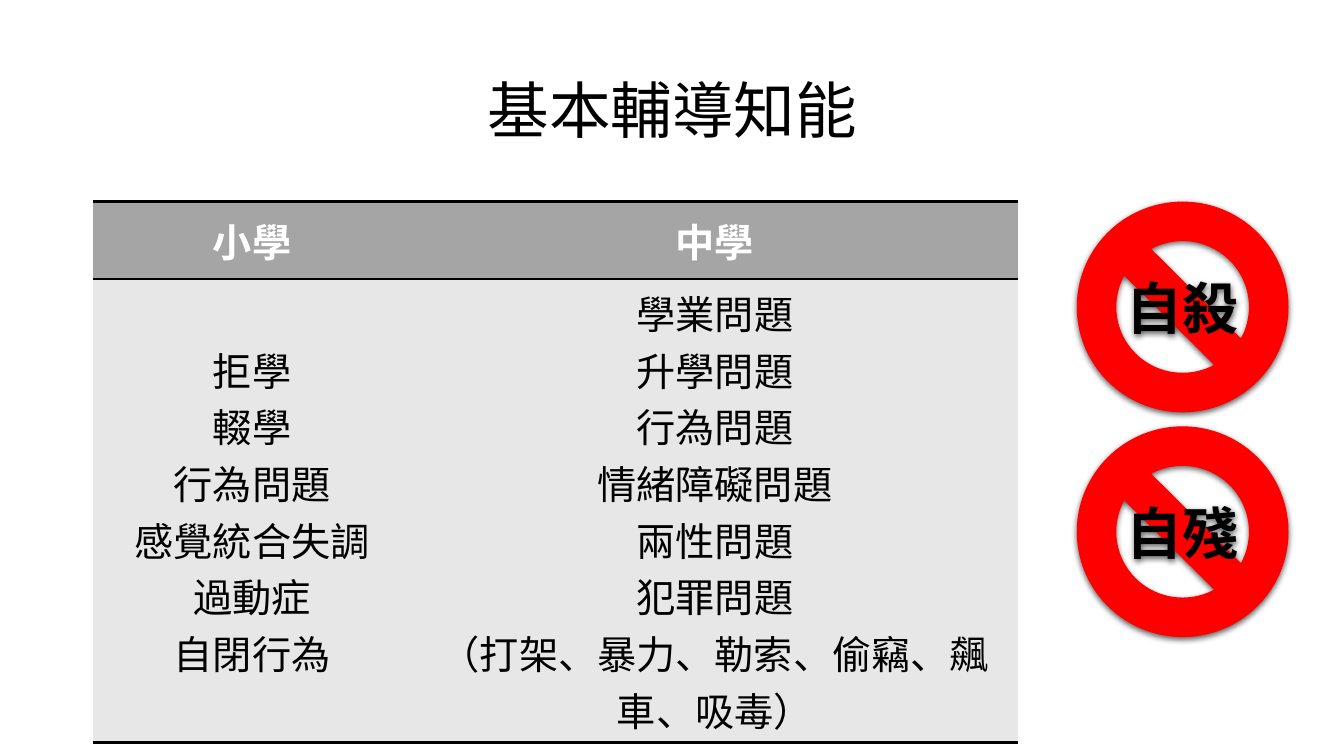
from dataclasses import dataclass

from lxml.etree import SubElement
from pptx import Presentation
from pptx.dml.color import RGBColor
from pptx.enum.shapes import MSO_SHAPE
from pptx.enum.text import MSO_ANCHOR, PP_ALIGN
from pptx.oxml.ns import qn
from pptx.slide import Slide
from pptx.table import _Cell
from pptx.text.text import TextFrame
from pptx.util import Inches, Pt


@dataclass(frozen=True)
class Theme:
    """Colours, fonts and type sizes."""
    black: str = "000000"
    white: str = "FFFFFF"
    red: str = "FF0000"
    header: str = "A5A5A5"
    body: str = "E7E7E7"
    cjk: str = "Noto Sans CJK SC"
    latin: str = "Calibri"
    title_size: int = 44
    sign_size: int = 40
    table_size: int = 28


@dataclass(frozen=True)
class Column:
    """A school level and its counselling issues."""
    level: str
    width: float
    issues: tuple[str, ...]


@dataclass(frozen=True)
class Sign:
    """A prohibition sign and its top edge."""
    label: str
    top: float


T = Theme()
ROW_HEIGHTS = (0.77, 4.18)
COLUMNS = (
    Column("小學", 3.16, ("拒學", "輟學", "行為問題", "感覺統合失調", "過動症", "自閉行為")),
    Column("中學", 6.02, ("學業問題", "升學問題", "行為問題", "情緒障礙問題", "兩性問題",
                        "犯罪問題", "（打架、暴力、勒索、偷竊、飆車、吸毒）")),
)
SIGNS = (Sign("自殺", 2), Sign("自殘", 4.23))


def write(tf: TextFrame, *lines: str, size: int, font: str = T.cjk, color: str = T.black,
          bold: bool = False, spacing: float = 1.0) -> None:
    """Fill a text frame with centred paragraphs."""
    tf.word_wrap = True
    for i, line in enumerate(lines):
        p = tf.add_paragraph() if i else tf.paragraphs[0]
        p.alignment = PP_ALIGN.CENTER
        p.line_spacing = spacing
        r = p.add_run()
        r.text = line
        r.font.size, r.font.bold, r.font.name = Pt(size), bold, font
        r.font.color.rgb = RGBColor.from_string(color)
        if font == T.cjk:
            SubElement(r.font._element, qn("a:ea"), typeface=font)


def add_title(s: Slide, text: str) -> None:
    """Add the slide title."""
    tf = s.shapes.add_textbox(Inches(0.92), Inches(0.4), Inches(11.5), Inches(1.45)).text_frame
    tf.vertical_anchor = MSO_ANCHOR.MIDDLE
    write(tf, text, size=T.title_size, spacing=0.9)


def set_borders(cell: _Cell, ruled: tuple[str, ...]) -> None:
    """Rule the named cell sides and clear the others."""
    tcPr = cell._tc.get_or_add_tcPr()
    for side in ("lnL", "lnR", "lnT", "lnB"):
        ln = SubElement(tcPr, qn(f"a:{side}"), w=str(Pt(2)))
        if side in ruled:
            SubElement(SubElement(ln, qn("a:solidFill")), qn("a:srgbClr"), val=T.black)
        else:
            SubElement(ln, qn("a:noFill"))


def fill_cell(cell: _Cell, *lines: str, fill: str, color: str, bold: bool,
              ruled: tuple[str, ...]) -> None:
    """Write, rule and colour one table cell."""
    write(cell.text_frame, *lines, size=T.table_size, font=T.latin, color=color, bold=bold)
    cell.vertical_anchor = MSO_ANCHOR.MIDDLE
    set_borders(cell, ruled)
    cell.fill.solid()
    cell.fill.fore_color.rgb = RGBColor.from_string(fill)


def add_issue_table(s: Slide) -> None:
    """Add the table of issues by school level."""
    width = sum(c.width for c in COLUMNS)
    table = s.shapes.add_table(len(ROW_HEIGHTS), len(COLUMNS), Inches(0.92), Inches(2),
                               Inches(width), Inches(sum(ROW_HEIGHTS))).table
    for row, height in zip(table.rows, ROW_HEIGHTS):
        row.height = Inches(height)
    for i, column in enumerate(COLUMNS):
        table.columns[i].width = Inches(column.width)
        fill_cell(table.cell(0, i), column.level, fill=T.header, color=T.white, bold=True,
                  ruled=("lnT", "lnB"))
        fill_cell(table.cell(1, i), *column.issues, fill=T.body, color=T.black, bold=False,
                  ruled=("lnT", "lnB"))


def add_sign(s: Slide, sign: Sign) -> None:
    """Add a red prohibition sign with a soft shadow."""
    sp = s.shapes.add_shape(MSO_SHAPE.NO_SYMBOL, Inches(10.68), Inches(sign.top),
                            Inches(2.1), Inches(2.09))
    sp.fill.solid()
    sp.fill.fore_color.rgb = RGBColor.from_string(T.red)
    sp.line.fill.background()
    sp.shadow.inherit = False
    effects = sp._element.spPr.find(qn("a:effectLst"))
    shadow = SubElement(effects, qn("a:outerShdw"), blurRad=str(Pt(4.5)), dist=str(Pt(1.5)),
                        dir="5400000", algn="ctr", rotWithShape="0")
    color = SubElement(shadow, qn("a:srgbClr"), val=T.black)
    SubElement(color, qn("a:alpha"), val="63000")
    sp.text_frame.vertical_anchor = MSO_ANCHOR.MIDDLE
    write(sp.text_frame, sign.label, size=T.sign_size, bold=True)


def main() -> None:
    """Build and save the slide."""
    prs = Presentation()
    prs.slide_width, prs.slide_height = Inches(13.33), Inches(7.5)
    s = prs.slides.add_slide(prs.slide_layouts[6])
    add_issue_table(s)
    for sign in SIGNS:
        add_sign(s, sign)
    add_title(s, "基本輔導知能")
    prs.save("out.pptx")


if __name__ == "__main__":
    main()
